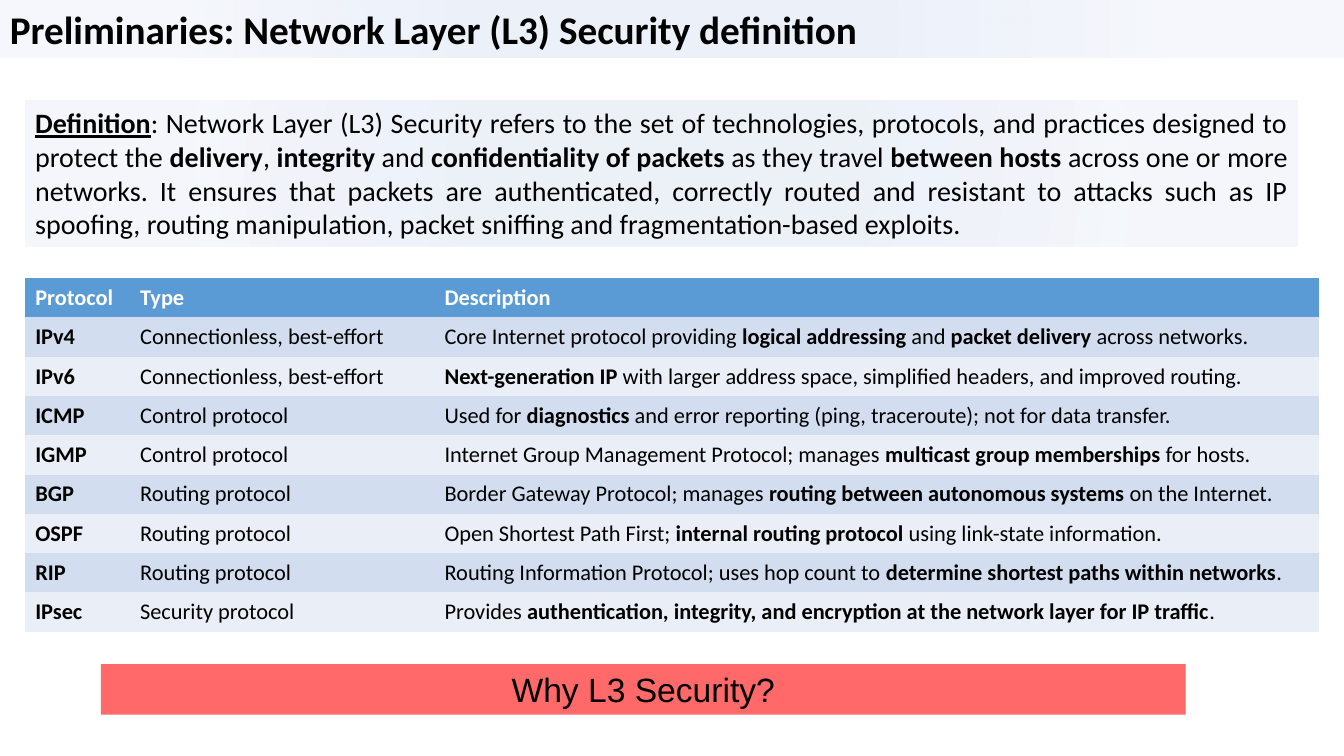
from dataclasses import dataclass

from lxml.etree import SubElement
from pptx import Presentation
from pptx.dml.color import RGBColor
from pptx.enum.shapes import MSO_SHAPE as Shape
from pptx.enum.text import MSO_ANCHOR as Anchor, MSO_AUTO_SIZE as Fit, PP_ALIGN as Align
from pptx.oxml.ns import qn
from pptx.util import Emu, Pt

PX = 9144
PLAIN = "{2D5ABB26-0587-4C30-8999-92F81FD0307C}"
HEAD, BANDS = "5B9BD5", ("D2DEEF", "EAEFF7")
COLS, ROW = (104, 302, 877), 39


@dataclass
class Box:
    """A text panel; a fill of None means the pale blue gradient."""
    x: int
    y: int
    w: int
    h: int
    text: str
    size: int
    align: Align
    face: str = "Calibri"
    fill: str | None = None


TITLE = Box(0, 0, 1333, 57, "*Preliminaries: Network Layer (L3) Security definition*",
            28, Align.LEFT)
TERM = Box(25, 100, 1262, 145,
           "*Definition*: Network Layer (L3) Security refers to the set of technologies, "
           "protocols, and practices designed to protect the *delivery*, *integrity *and "
           "*confidentiality of packets *as they travel *between hosts *across one or more "
           "networks. It ensures that packets are authenticated, correctly routed and "
           "resistant to attacks such as IP spoofing, routing manipulation, packet sniffing "
           "and fragmentation-based exploits.", 20, Align.JUSTIFY)
ASK = Box(100, 659, 1076, 50, "Why L3 Security?", 24, Align.CENTER, "Arial", "FF6969")

ROWS = (
    ("*Protocol*", "*Type*", "*Description*"),
    ("*IPv4*", "Connectionless, best-effort",
     "Core Internet protocol providing *logical addressing *and *packet delivery *"
     "across networks."),
    ("*IPv6*", "Connectionless, best-effort",
     "*Next-generation IP *with larger address space, simplified headers, "
     "and improved routing."),
    ("*ICMP*", "Control protocol",
     "Used for *diagnostics* and error reporting (ping, traceroute); not for data transfer."),
    ("*IGMP*", "Control protocol",
     "Internet Group Management Protocol; manages *multicast group memberships *for hosts."),
    ("*BGP*", "Routing protocol",
     "Border Gateway Protocol; manages *routing between autonomous systems *on the Internet."),
    ("*OSPF*", "Routing protocol",
     "Open Shortest Path First; *internal routing protocol *using link-state information."),
    ("*RIP*", "Routing protocol",
     "Routing Information Protocol; uses hop count to "
     "*determine shortest paths within networks*."),
    ("*IPsec*", "Security protocol",
     "Provides *authentication, integrity, and encryption at the network layer "
     "for IP traffic*."),
)


def px(n: int) -> Emu:
    """Turn px into EMU."""
    return Emu(n * PX)


def paint(fill, tone: str) -> None:
    """Fill with one solid colour."""
    fill.solid()
    fill.fore_color.rgb = RGBColor.from_string(tone)


def write(para, text: str, size: int, face: str, tone: str) -> None:
    """Add runs to a paragraph, bold between asterisks."""
    for i, part in enumerate(text.split("*")):
        if part:
            run = para.add_run()
            run.text = part
            look = {"size": Pt(size), "name": face, "bold": i % 2 == 1}
            for key, val in look.items():
                setattr(run.font, key, val)
            paint(run.font.fill, tone)


def blend(shape) -> None:
    """Give a shape the pale circular gradient."""
    shape.fill.gradient()
    grad = shape.element.spPr.find(qn("a:gradFill"))
    for kid in list(grad):
        grad.remove(kid)
    stops = SubElement(grad, qn("a:gsLst"))
    for pos, alpha in ((26, 10), (76, 5)):
        stop = SubElement(stops, qn("a:gs"), pos=str(pos * 1000))
        tone = SubElement(stop, qn("a:srgbClr"), val="4472C4")
        SubElement(tone, qn("a:alpha"), val=str(alpha * 1000))
    ring = SubElement(grad, qn("a:path"), path="circle")
    SubElement(ring, qn("a:fillToRect"), l="0", t="0", r="0", b="0")


def panel(slide, box: Box):
    """Draw a text panel and return its paragraph."""
    shape = slide.shapes.add_shape(Shape.RECTANGLE, px(box.x), px(box.y), px(box.w), px(box.h))
    shape.shadow.inherit = False
    shape.line.fill.background()
    if box.fill:
        paint(shape.fill, box.fill)
    else:
        blend(shape)
    frame = shape.text_frame
    look = {"word_wrap": True, "auto_size": Fit.SHAPE_TO_FIT_TEXT, "vertical_anchor": Anchor.TOP}
    for key, val in look.items():
        setattr(frame, key, val)
    para = frame.paragraphs[0]
    para.alignment = box.align
    write(para, box.text, box.size, box.face, "000000")
    return para


def grid(slide) -> None:
    """Draw the protocol table."""
    table = slide.shapes.add_table(len(ROWS), len(COLS), px(25), px(276),
                                   px(sum(COLS)), px(ROW * len(ROWS))).table
    table._tbl.tblPr.find(qn("a:tableStyleId")).text = PLAIN
    for col, wide in zip(table.columns, COLS):
        col.width = px(wide)
    for r, row in enumerate(ROWS):
        table.rows[r].height = px(ROW)
        for c, text in enumerate(row):
            cell = table.cell(r, c)
            cell.vertical_anchor = Anchor.MIDDLE
            paint(cell.fill, BANDS[(r - 1) % 2] if r else HEAD)
            write(cell.text_frame.paragraphs[0], text, 16, "Calibri",
                  "000000" if r else "FFFFFF")


def main() -> None:
    """Build and save the slide."""
    deck = Presentation()
    deck.slide_width, deck.slide_height = px(1333), px(750)
    slide = deck.slides.add_slide(deck.slide_layouts[6])
    panel(slide, TITLE)
    grid(slide)
    panel(slide, TERM).runs[0].font.underline = True
    panel(slide, ASK)
    deck.save("out.pptx")


if __name__ == "__main__":
    main()
